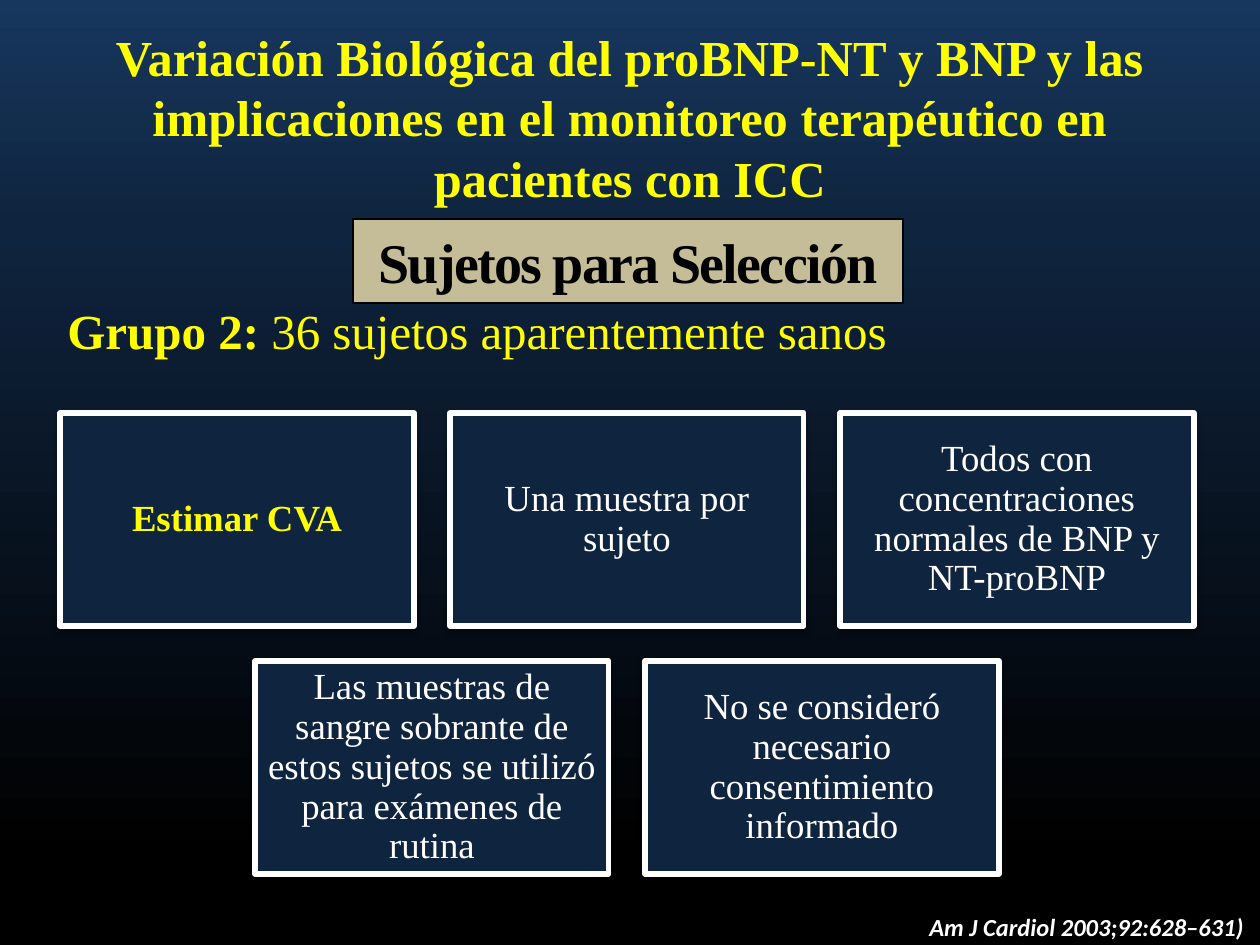
"""Build the slide on subject selection for the BNP biological variation study."""
from copy import deepcopy
from typing import NamedTuple

from lxml.etree import SubElement
from pptx import Presentation
from pptx.dml.color import RGBColor
from pptx.enum.shapes import MSO_SHAPE
from pptx.enum.text import MSO_ANCHOR as ANCHOR, MSO_AUTO_SIZE as AUTO, PP_ALIGN as ALIGN
from pptx.oxml.ns import qn
from pptx.util import Emu, Pt

SCALE = 914400 / 126
SERIF = "Times New Roman"
YELLOW, WHITE, BLACK, NAVY, TAN = "FFFF00", "FFFFFF", "000000", "0F243E", "C4BD97"
BACKGROUND = [(0, "17375E"), (0.24, NAVY), (0.91, BLACK)]


class Box(NamedTuple):
    x: int
    y: int
    w: int
    h: int


class Card(NamedTuple):
    text: str
    color: str = WHITE
    bold: bool = False


CARD_W, CARD_H, GAP_X, GAP_Y = 354, 213, 36, 35
CENTER_X, CARDS_Y = 627, 413
ROWS = [
    [
        Card("Estimar CVA", YELLOW, True),
        Card("Una muestra por sujeto"),
        Card("Todos con concentraciones normales de BNP y NT-proBNP"),
    ],
    [
        Card("Las muestras de sangre sobrante de estos sujetos se utilizó para exámenes de rutina"),
        Card("No se consideró necesario consentimiento informado"),
    ],
]


def px(n: int) -> Emu:
    return Emu(round(n * SCALE))


def rgb(color: str) -> RGBColor:
    return RGBColor.from_string(color)


def style(p, size: float, color: str, bold=None, font: str = SERIF, align=ALIGN.LEFT) -> None:
    p.alignment = align
    f = p.font
    f.name, f.size, f.bold = font, Pt(size), bold
    f.color.rgb = rgb(color)


def paint_background(s) -> None:
    fill = s.background.fill
    fill.gradient()
    fill.gradient_angle = 270
    stops = s.element.find(".//" + qn("a:gsLst"))
    stops.append(deepcopy(stops[0]))
    for stop, (position, color) in zip(fill.gradient_stops, BACKGROUND):
        stop.position = position
        stop.color.rgb = rgb(color)


def add_text(s, box: Box, text: str, wrap: bool = False):
    tf = s.shapes.add_textbox(*map(px, box)).text_frame
    tf.word_wrap = wrap
    tf.auto_size = AUTO.NONE if wrap else AUTO.SHAPE_TO_FIT_TEXT
    p = tf.paragraphs[0]
    p.add_run().text = text
    return tf, p


def add_rect(s, box: Box, fill: str, line: str, width: float, text: str):
    sp = s.shapes.add_shape(MSO_SHAPE.RECTANGLE, *map(px, box))
    sp.shadow.inherit = False
    sp.fill.solid()
    sp.fill.fore_color.rgb = rgb(fill)
    sp.line.color.rgb = rgb(line)
    sp.line.width = Pt(width)
    tf = sp.text_frame
    tf.word_wrap = True
    tf.vertical_anchor = ANCHOR.MIDDLE
    tf.text = text
    return sp, tf.paragraphs[0]


def add_shadow(sp) -> None:
    effects = sp.element.spPr.find(qn("a:effectLst"))
    shadow = SubElement(effects, qn("a:outerShdw"), blurRad=str(Pt(3.1)),
                        dist=str(Pt(1.8)), dir="5400000", rotWithShape="0")
    color = SubElement(shadow, qn("a:srgbClr"), val=BLACK)
    SubElement(color, qn("a:alpha"), val="35000")


def add_card(s, box: Box, card: Card) -> None:
    sp, p = add_rect(s, box, NAVY, WHITE, 3, card.text)
    add_shadow(sp)
    tf = sp.text_frame
    tf.margin_left = tf.margin_right = tf.margin_top = tf.margin_bottom = px(11)
    style(p, 21, card.color, card.bold, align=ALIGN.CENTER)
    p.line_spacing = 0.9


def add_cards(s) -> None:
    for i, row in enumerate(ROWS):
        width = len(row) * (CARD_W + GAP_X) - GAP_X
        y = CARDS_Y + i * (CARD_H + GAP_Y)
        for j, card in enumerate(row):
            x = CENTER_X - width // 2 + j * (CARD_W + GAP_X)
            add_card(s, Box(x, y, CARD_W, CARD_H), card)


def main() -> None:
    prs = Presentation()
    prs.slide_width, prs.slide_height = px(1260), px(945)
    s = prs.slides.add_slide(prs.slide_layouts[6])
    paint_background(s)

    tf, p = add_text(s, Box(63, 38, 1134, 157),
                     "Variación Biológica del proBNP-NT y BNP y las implicaciones "
                     "en el monitoreo terapéutico en pacientes con ICC", wrap=True)
    tf.vertical_anchor = ANCHOR.MIDDLE
    style(p, 28.8, YELLOW, True, align=ALIGN.CENTER)

    _, p = add_rect(s, Box(353, 219, 550, 84), TAN, BLACK, 0.75, "Sujetos para Selección")
    style(p, 32, BLACK, True, align=ALIGN.CENTER)
    p.runs[0].font._element.set("spc", "-100")

    _, p = add_text(s, Box(917, 906, 343, 43), "Am J Cardiol 2003;92:628–631)")
    style(p, 14, WHITE, True, "Calibri")
    p.font.italic = True

    add_cards(s)

    _, p = add_text(s, Box(55, 294, 853, 72), "Grupo 2: ")
    style(p, 28, YELLOW, align=ALIGN.JUSTIFY)
    p.runs[0].font.bold = True
    p.add_run().text = "36 sujetos aparentemente sanos"

    prs.save("out.pptx")


if __name__ == "__main__":
    main()
